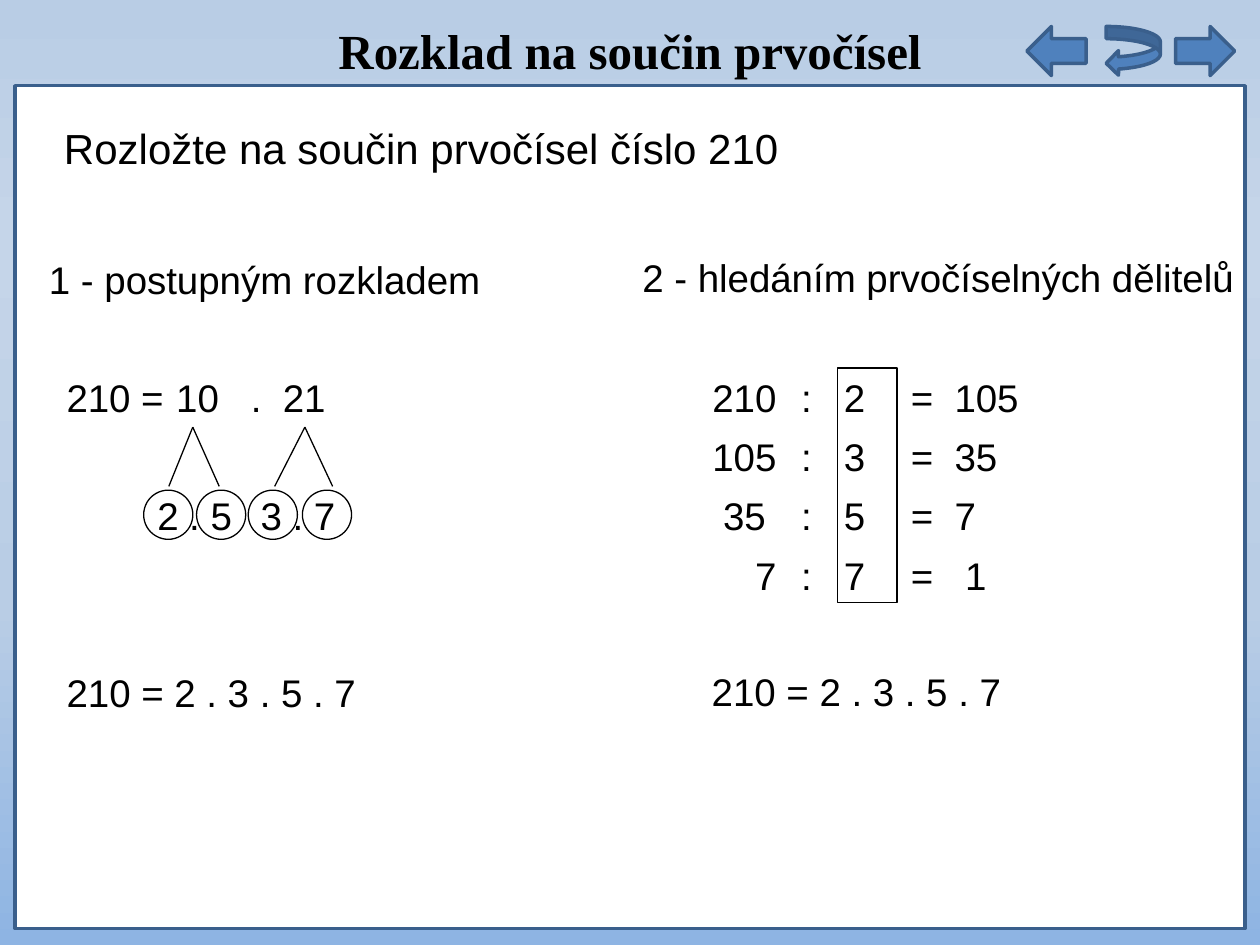
"""Build a slide on factoring 210 into primes in two ways."""
from copy import deepcopy

from lxml import etree
from pptx import Presentation
from pptx.dml.color import RGBColor
from pptx.enum.shapes import MSO_CONNECTOR, MSO_SHAPE
from pptx.enum.text import MSO_ANCHOR, MSO_AUTO_SIZE, PP_ALIGN
from pptx.oxml.ns import qn
from pptx.util import Inches, Pt

RECTANGLE, OVAL = MSO_SHAPE.RECTANGLE, MSO_SHAPE.OVAL
RIGHT_ARROW, CURVED_ARROW = MSO_SHAPE.RIGHT_ARROW, MSO_SHAPE.CURVED_LEFT_ARROW
STRAIGHT = MSO_CONNECTOR.STRAIGHT
LEFT, RIGHT, CENTER = PP_ALIGN.LEFT, PP_ALIGN.RIGHT, PP_ALIGN.CENTER
TOP, GROW = MSO_ANCHOR.TOP, MSO_AUTO_SIZE.SHAPE_TO_FIT_TEXT
BLACK, WHITE, BLUE, DARK_BLUE = "000000", "FFFFFF", "4F81BD", "3A5F8C"
rgb = RGBColor.from_string


def write(shape, text, size=22, font="Arial", align=LEFT, bold=False, wrap=True):
    frame = shape.text_frame
    frame.text = text
    frame.word_wrap = wrap
    frame.auto_size = GROW
    frame.vertical_anchor = TOP
    paragraph = frame.paragraphs[0]
    paragraph.alignment = align
    for run in paragraph.runs:
        run.font.size = Pt(size)
        run.font.name = font
        run.font.bold = bold
        run.font.color.rgb = rgb(BLACK)


def add_preset(kind, left, top, width, height, fill=None, line=BLACK, weight=0.75):
    shape = slide.shapes.add_shape(
        kind, Inches(left), Inches(top), Inches(width), Inches(height))
    shape.shadow.inherit = False
    if fill:
        shape.fill.solid()
        shape.fill.fore_color.rgb = rgb(fill)
    else:
        shape.fill.background()
    shape.line.color.rgb = rgb(line)
    shape.line.width = Pt(weight)
    return shape


presentation = Presentation()
presentation.slide_width, presentation.slide_height = Inches(10), Inches(7.5)
slide = presentation.slides.add_slide(presentation.slide_layouts[5])

background = slide.background.fill
background.gradient()
background.gradient_angle = 270
stop_list = slide.element.find(".//" + qn("a:gsLst"))
for _ in range(2):
    stop_list.append(deepcopy(stop_list[0]))
gradient = [(0, "B9CDE5"), (0.25, "C5D5E9"), (0.64, "B9CDE5"), (1, "8EB4E3")]
for stop, (position, color) in zip(background.gradient_stops, gradient):
    stop.position = position
    stop.color.rgb = rgb(color)

title = slide.shapes.title
title.left, title.top = Inches(0.12), Inches(0.11)
title.width, title.height = Inches(9.76), Inches(0.57)
write(title, "Rozklad na součin prvočísel", 28, "Times New Roman", CENTER, True)

add_preset(RECTANGLE, 0.12, 0.68, 9.76, 6.69, WHITE, DARK_BLUE, 2)

first_row, row_height = 2.92, 0.47
factor_row = first_row + 2 * row_height
texts = [
    ("Rozložte na součin prvočísel číslo 210", 0.41, 0.92, 8.84, 24, LEFT, True),
    ("1 - postupným rozkladem", 0.29, 1.98, 5.12, 22, LEFT, True),
    ("2 - hledáním prvočíselných dělitelů", 5, 1.97, 4.96, 22, LEFT, False),
    ("210 =", 0.43, first_row, 1.1, 22, LEFT, True),
    ("10   .  21", 1.3, first_row, 1.58, 22, LEFT, True),
    ("2 . 5", 1.15, factor_row, 1.34, 22, LEFT, True),
    ("3 . 7", 1.97, factor_row, 1.16, 22, LEFT, True),
    ("210 = 2 . 3 . 5 . 7", 0.43, 5.26, 2.99, 22, LEFT, True),
    ("210 = 2 . 3 . 5 . 7", 5.55, 5.25, 2.99, 22, LEFT, True),
]

divisions = [("210 ", "2 ", "=  105"), ("105 ", "3 ", "=  35"),
             ("35 ", "5 ", "=  7"), ("7", "7 ", "=   1")]
for index, (dividend, divisor, quotient) in enumerate(divisions):
    top = first_row + index * row_height
    texts += [
        (dividend, 5.47, top, 0.79, 22, RIGHT, True),
        (":", 6.26, top, 0.39, 22, LEFT, True),
        (divisor, 6.26, top, 0.79, 22, RIGHT, True),
        (quotient, 7.13, top, 1.18, 22, LEFT, True),
    ]

for text, left, top, width, size, align, wrap in texts:
    text_box = slide.shapes.add_textbox(
        Inches(left), Inches(top), Inches(width), Inches(0.51 if size == 24 else 0.47))
    write(text_box, text, size, align=align, wrap=wrap)

for start, ends in [(1.53, (1.34, 1.74)), (2.42, (2.18, 2.64))]:
    for end in ends:
        branch = slide.shapes.add_connector(
            STRAIGHT, Inches(start), Inches(3.39), Inches(end), Inches(3.86))
        branch.line.color.rgb = rgb(BLACK)
        branch.line.width = Pt(0.75)
        etree.SubElement(branch.element.spPr, qn("a:effectLst"))

add_preset(RECTANGLE, 6.65, first_row, 0.47, 1.86)
for left in (1.14, 1.56, 1.97, 2.4):
    add_preset(OVAL, left, 3.89, 0.39, 0.39)

add_preset(RIGHT_ARROW, 9.33, 0.21, 0.47, 0.39, BLUE, DARK_BLUE, 2)
back_arrow = add_preset(RIGHT_ARROW, 8.15, 0.21, 0.47, 0.39, BLUE, DARK_BLUE, 2)
back_arrow.element.spPr.find(qn("a:xfrm")).set("flipH", "1")
add_preset(CURVED_ARROW, 8.78, 0.21, 0.43, 0.39, BLUE, DARK_BLUE, 2)

presentation.save("out.pptx")
